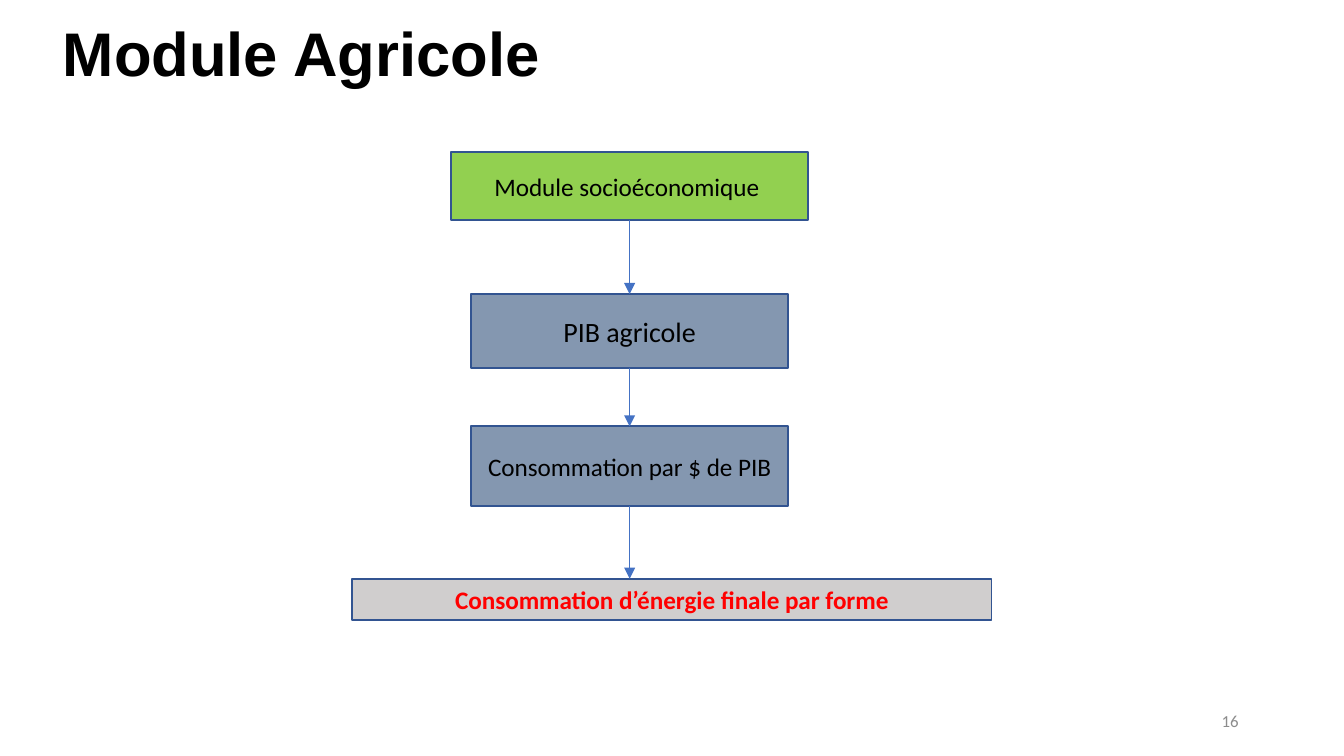
"""Build the flow chart slide of the farming module."""
from lxml.etree import SubElement as Sub
from pptx import Presentation
from pptx.dml.color import RGBColor as RGB
from pptx.enum.shapes import MSO_CONNECTOR as Link, MSO_SHAPE as Kind
from pptx.enum.text import MSO_ANCHOR as Anchor, PP_ALIGN as Align
from pptx.oxml.ns import qn
from pptx.util import Cm, Pt


def hue(code):
    return RGB.from_string(code)


def write(shape, text, tint, align, look):
    frame = shape.text_frame
    frame.word_wrap = True
    frame.vertical_anchor = Anchor.MIDDLE
    para = frame.paragraphs[0]
    para.alignment = align
    run = para.add_run()
    run.text = text
    for key, value in look.items():
        setattr(run.font, key, value)
    run.font.color.rgb = hue(tint)
    return para


deck = Presentation()
deck.slide_width, deck.slide_height = Cm(25.4), Cm(14.29)
slide = deck.slides.add_slide(deck.slide_layouts[6])
shapes = slide.shapes

title = shapes.add_textbox(Cm(0.94), Cm(0.3), Cm(21.9), Cm(1.52))
look = {"name": "Arial", "size": Pt(33), "bold": True}
write(title, "Module Agricole", "000000", Align.LEFT, look).line_spacing = 0.9

axis = 11.9
steps = [
    ("Module socioéconomique ", 8.53, 2.88, 6.74, 1.28, "92D050", "000000", 13.5, False),
    ("PIB agricole", 8.91, 5.56, 5.98, 1.4, "8497B0", "000000", 15, False),
    ("Consommation par $ de PIB", 8.91, 8.06, 5.98, 1.5, "8497B0", "000000", 13.5, False),
    ("Consommation d’énergie finale par forme", 6.66, 10.94, 12.08, 0.78,
     "D0CECE", "FF0000", 13.5, True),
]
boxes = []
for text, left, top, wide, high, fill, tint, size, bold in steps:
    box = shapes.add_shape(Kind.FLOWCHART_PROCESS, Cm(left), Cm(top), Cm(wide), Cm(high))
    box.shadow.inherit = False
    box.fill.solid()
    box.fill.fore_color.rgb = hue(fill)
    box.line.color.rgb = hue("325491")
    box.line.width = Pt(1)
    look = {"name": "Calibri", "size": Pt(size), "bold": bold}
    write(box, text, tint, Align.CENTER, look)
    boxes.append(box)

for start, end in zip(boxes, boxes[1:]):
    arrow = shapes.add_connector(Link.STRAIGHT, Cm(axis), start.top + start.height,
                                 Cm(axis), end.top)
    arrow.begin_connect(start, 2)
    if end is not boxes[-1]:
        arrow.end_connect(end, 0)
    arrow.line.color.rgb = hue("4472C4")
    arrow.line.width = Pt(0.5)
    Sub(arrow.line._get_or_add_ln(), qn("a:tailEnd"), type="triangle")
    Sub(arrow._element.spPr, qn("a:effectLst"))

page = shapes.add_textbox(Cm(17.94), Cm(13.24), Cm(5.72), Cm(0.76))
look = {"name": "Calibri", "size": Pt(9)}
write(page, "16", "8C8C8C", Align.RIGHT, look)

deck.save("out.pptx")
